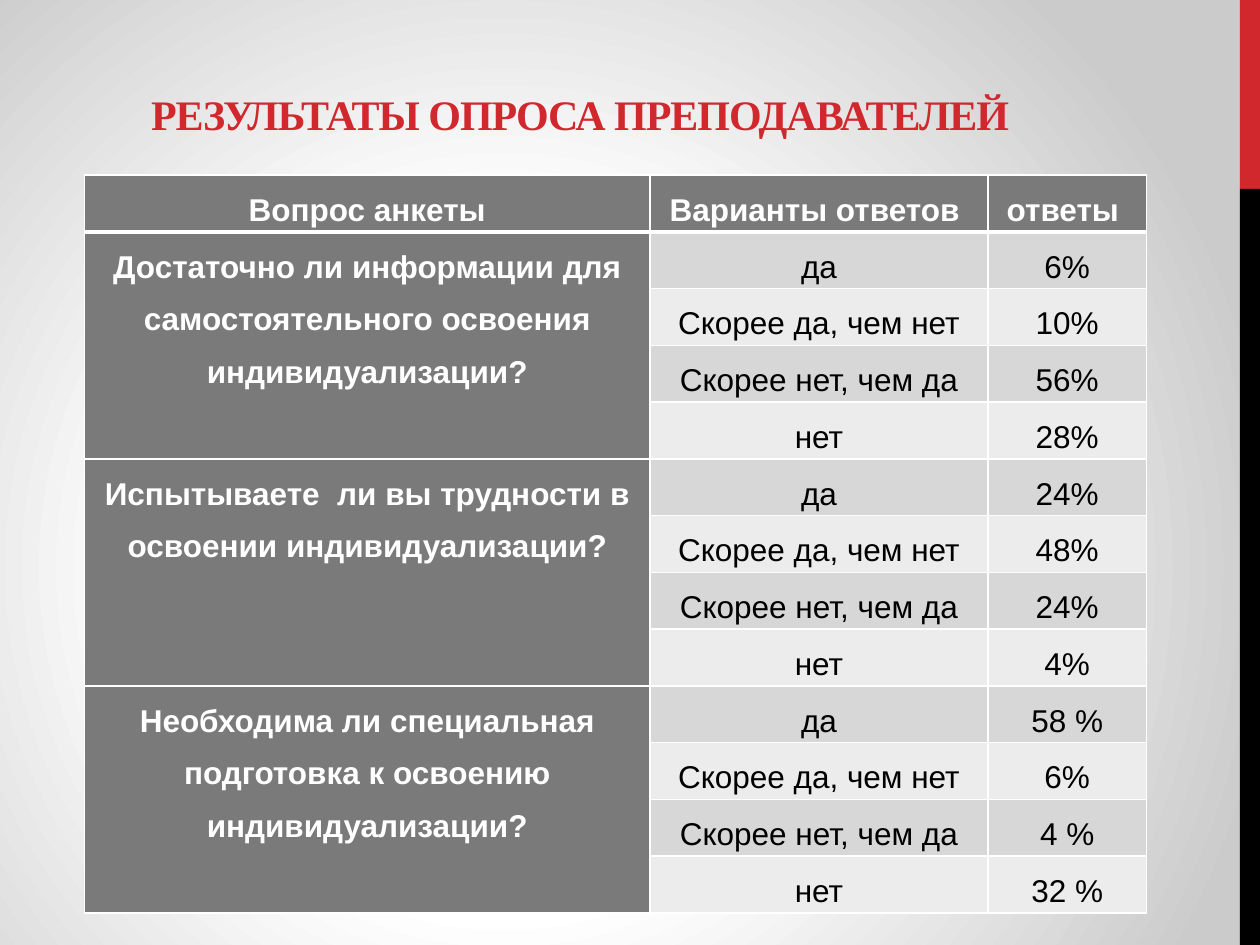
from lxml.etree import SubElement
from pptx import Presentation
from pptx.dml.color import RGBColor
from pptx.enum.shapes import MSO_SHAPE
from pptx.enum.text import MSO_ANCHOR, PP_ALIGN
from pptx.oxml import parse_xml
from pptx.oxml.ns import nsdecls, qn
from pptx.util import Inches, Pt

RED = RGBColor(0xD1, 0x28, 0x2E)
BLACK = RGBColor(0x00, 0x00, 0x00)
WHITE = RGBColor(0xFF, 0xFF, 0xFF)
SILVER = RGBColor(0xCB, 0xCB, 0xCB)
HEADING_GRAY = RGBColor(0x7A, 0x7A, 0x7A)
BAND_GRAYS = (RGBColor(0xD7, 0xD7, 0xD7), RGBColor(0xEC, 0xEC, 0xEC))

TITLE = "РЕЗУЛЬТАТЫ ОПРОСА ПРЕПОДАВАТЕЛЕЙ "
HEADINGS = ("Вопрос анкеты", "Варианты ответов ", "ответы ")
OPTIONS = ("да", "Скорее да, чем нет", "Скорее нет, чем да", "нет")
SURVEY = (
    ("Достаточно ли информации для самостоятельного освоения индивидуализации?",
     ("6%", "10%", "56%", "28%")),
    ("Испытываете  ли вы трудности в освоении индивидуализации?",
     ("24%", "48%", "24%", "4%")),
    ("Необходима ли специальная подготовка к освоению индивидуализации?",
     ("58 %", "6%", "4 %", "32 %")),
)
COLUMN_WIDTHS = (4.49, 2.68, 1.26)
ROW_HEIGHT = 0.43


def write_text(frame, text, font="Arial", size=18, color=BLACK, bold=False,
               line_spacing=1.0, space_before=0, tracking=0):
    frame.word_wrap = True
    paragraph = frame.paragraphs[0]
    paragraph.alignment = PP_ALIGN.CENTER
    paragraph.line_spacing = line_spacing
    paragraph.space_before = Pt(space_before)
    run = paragraph.add_run()
    run.text = text
    run.font.name = font
    run.font.size = Pt(size)
    run.font.bold = bold
    run.font.color.rgb = color
    if tracking:
        run.font._element.set("spc", str(round(tracking * 100)))


def paint_background(slide):
    slide.background.fill.solid()
    properties = slide.element.find(".//" + qn("p:bgPr"))
    gradient = parse_xml(f'<a:gradFill rotWithShape="1" {nsdecls("a")}/>')
    stops = SubElement(gradient, qn("a:gsLst"))
    for position, color in ((0, WHITE), (44, WHITE), (100, SILVER)):
        stop = SubElement(stops, qn("a:gs"), pos=str(position * 1000))
        SubElement(stop, qn("a:srgbClr"), val=str(color))
    circle = SubElement(gradient, qn("a:path"), path="circle")
    SubElement(circle, qn("a:fillToRect"), l="40000", t="60000", r="60000", b="40000")
    properties.replace(properties[0], gradient)


def add_side_bar(slide, top, height, color):
    bar = slide.shapes.add_shape(MSO_SHAPE.RECTANGLE, Inches(9.84), Inches(top),
                                 Inches(0.16), Inches(height))
    bar.shadow.inherit = False
    bar.fill.solid()
    bar.fill.fore_color.rgb = color
    bar.line.fill.background()


def add_title(slide):
    title = slide.shapes.add_textbox(Inches(0.5), Inches(0.17), Inches(8.28), Inches(0.98))
    title.text_frame.vertical_anchor = MSO_ANCHOR.BOTTOM
    write_text(title.text_frame, TITLE, font="Times New Roman", size=24,
               color=RED, bold=True, tracking=-0.6)


def style_cell(cell, fill, top=1, bottom=1):
    cell.margin_left = cell.margin_right = Inches(0.07)
    cell.margin_top = cell.margin_bottom = 0
    cell.fill.solid()
    cell.fill.fore_color.rgb = fill
    edges = (("L", 1), ("R", 1), ("T", top), ("B", bottom))
    for index, (side, width) in enumerate(edges):
        edge = parse_xml(
            f'<a:ln{side} w="{Pt(width)}" {nsdecls("a")}><a:solidFill>'
            f'<a:srgbClr val="{WHITE}"/></a:solidFill></a:ln{side}>')
        cell._tc.get_or_add_tcPr().insert(index, edge)


def write_cell(cell, text, heading=False):
    write_text(cell.text_frame, text, color=WHITE if heading else BLACK,
               bold=heading, line_spacing=1.5, space_before=6)


def add_survey_table(slide):
    row_count = 1 + len(SURVEY) * len(OPTIONS)
    table = slide.shapes.add_table(
        row_count, len(COLUMN_WIDTHS), Inches(0.67), Inches(1.39),
        Inches(sum(COLUMN_WIDTHS)), Inches(ROW_HEIGHT * row_count)).table
    for column, width in zip(table.columns, COLUMN_WIDTHS):
        column.width = Inches(width)
    for row in table.rows:
        row.height = Inches(ROW_HEIGHT)

    for row in range(row_count):
        for column in range(len(COLUMN_WIDTHS)):
            is_heading = row == 0 or column == 0
            fill = HEADING_GRAY if is_heading else BAND_GRAYS[(row - 1) % 2]
            style_cell(table.cell(row, column), fill,
                       top=3 if row == 1 else 1, bottom=3 if row == 0 else 1)

    for column, heading in enumerate(HEADINGS):
        write_cell(table.cell(0, column), heading, heading=True)
    for group, (question, shares) in enumerate(SURVEY):
        first = 1 + group * len(OPTIONS)
        question_cell = table.cell(first, 0)
        question_cell.merge(table.cell(first + len(OPTIONS) - 1, 0))
        write_cell(question_cell, question, heading=True)
        for row, (option, share) in enumerate(zip(OPTIONS, shares), first):
            write_cell(table.cell(row, 1), option)
            write_cell(table.cell(row, 2), share)


def main():
    deck = Presentation()
    deck.slide_width = Inches(10)
    deck.slide_height = Inches(7.5)
    slide = deck.slides.add_slide(deck.slide_layouts[6])
    paint_background(slide)
    add_side_bar(slide, 0, 1.5, RED)
    add_side_bar(slide, 1.5, 6, BLACK)
    add_title(slide)
    add_survey_table(slide)
    deck.save("out.pptx")


if __name__ == "__main__":
    main()
